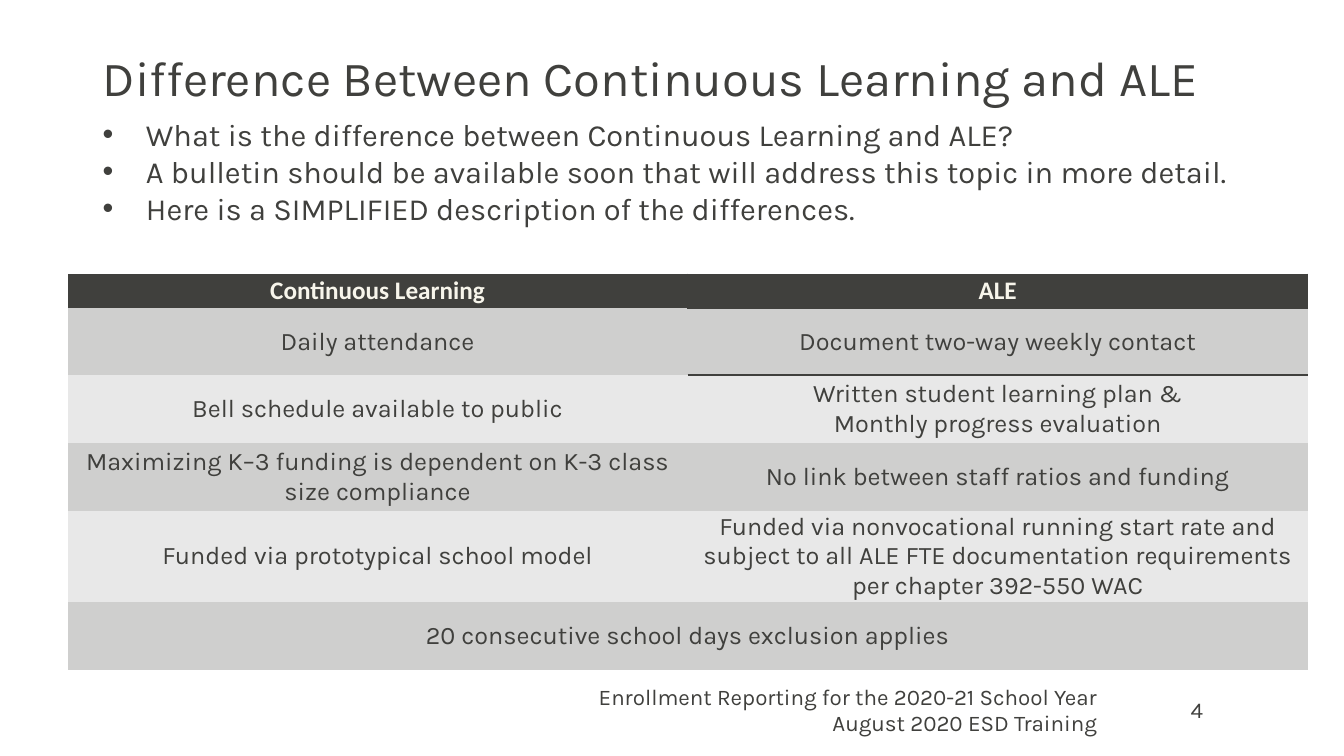
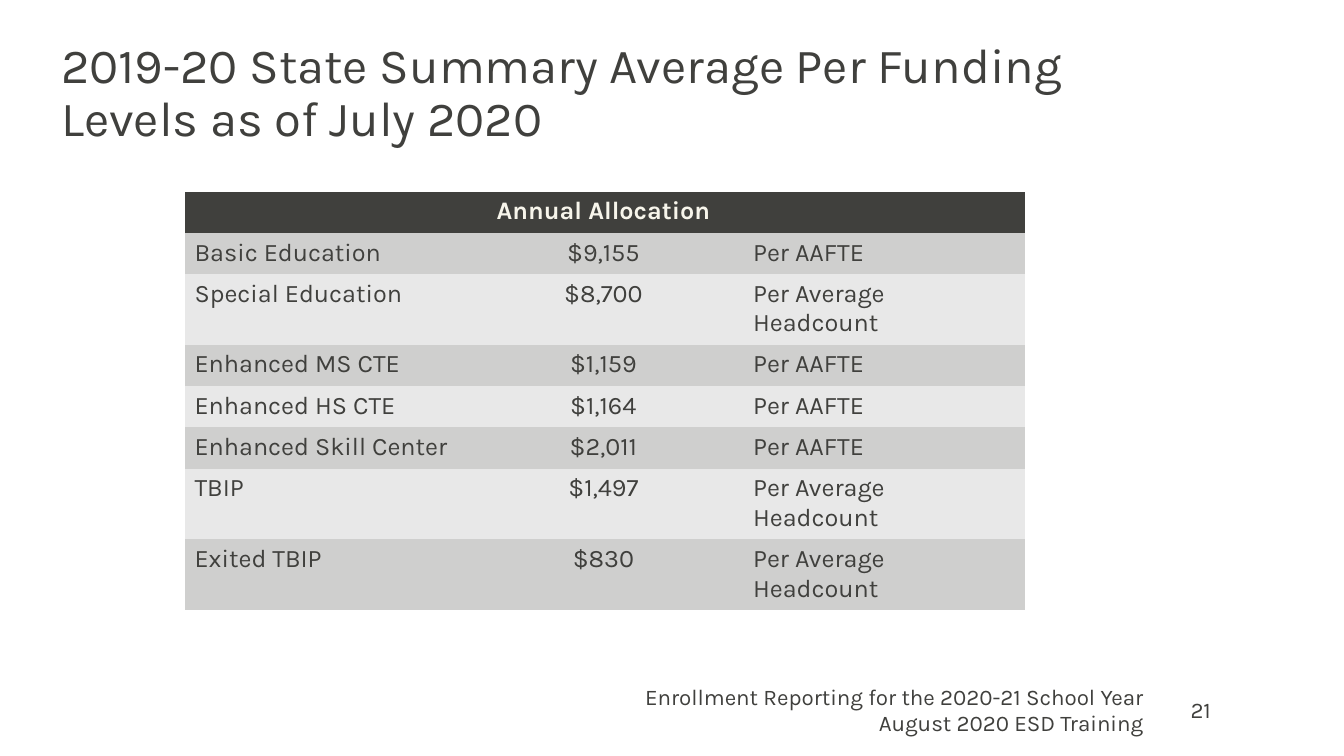
from pptx import Presentation
from pptx.dml.color import RGBColor
from pptx.enum.text import MSO_ANCHOR, PP_ALIGN
from pptx.oxml.ns import qn
from pptx.util import Emu, Pt
from lxml import etree

LEFT, CENTER, RIGHT = PP_ALIGN.LEFT, PP_ALIGN.CENTER, PP_ALIGN.RIGHT
TOP, MIDDLE = MSO_ANCHOR.TOP, MSO_ANCHOR.MIDDLE
EMU_PER_PX = 9144
COLORS = {"dark": "40403D", "cream": "F7F5EB", "odd": "CFCFCE", "even": "E8E8E8"}
BODY_FONT = "Karla"
NO_STYLE = "{2D5ABB26-0587-4C30-8999-92F81FD0307C}"
FOOTER = ["Enrollment Reporting for the 2020-21 School Year", "August 2020 ESD Training"]

SLIDES = [
    {
        "title": "Difference Between Continuous Learning and ALE",
        "title_at": (92, 7, 1150, 145),
        "bullets": [
            "What is the difference between Continuous Learning and ALE?",
            "A bulletin should be available soon that will address this topic in more detail.",
            "Here is a SIMPLIFIED description of the differences.",
        ],
        "footer_at": (462, 684, 636, 40),
        "number": "4",
        "table": {
            "at": (67, 272),
            "columns": [615, 615],
            "heights": [34, 66, 68, 67, 68, 68],
            "aligns": [CENTER, CENTER],
            "anchor": MIDDLE,
            "margins": (7, 0),
            "header_font": "Calibri",
            "borders": {(0, 0): "R", (0, 1): "LRTB", (1, 1): "TB"},
            "rows": [
                ("Continuous Learning", "ALE"),
                ("Daily attendance", "Document two-way weekly contact"),
                ("Bell schedule available to public",
                 "Written student learning plan &\nMonthly progress evaluation"),
                ("Maximizing K–3 funding is dependent on K-3 class size compliance",
                 "No link between staff ratios and funding"),
                ("Funded via prototypical school model",
                 "Funded via nonvocational running start rate and subject to all ALE FTE "
                 "documentation requirements per chapter 392-550 WAC"),
                ("20 consecutive school days exclusion applies",),
            ],
        },
    },
    {
        "title": "2019-20 State Summary Average Per Funding Levels as of July 2020",
        "title_at": (51, 21, 1120, 145),
        "bullets": [],
        "footer_at": (388, 684, 756, 40),
        "number": "21",
        "table": {
            "at": (183, 190),
            "columns": [277, 277, 280],
            "heights": [41] * 8,
            "aligns": [LEFT, CENTER, LEFT],
            "anchor": TOP,
            "margins": (10, 5),
            "header_font": BODY_FONT,
            "borders": {},
            "rows": [
                ("", "Annual Allocation", ""),
                ("Basic Education", "$9,155", "Per AAFTE"),
                ("Special Education", "$8,700", "Per Average Headcount"),
                ("Enhanced MS CTE", "$1,159", "Per AAFTE"),
                ("Enhanced HS CTE", "$1,164", "Per AAFTE"),
                ("Enhanced Skill Center", "$2,011", "Per AAFTE"),
                ("TBIP", "$1,497", "Per Average Headcount"),
                ("Exited TBIP", "$830", "Per Average Headcount"),
            ],
        },
    },
]


def px(length):
    return Emu(length * EMU_PER_PX)


def color(name):
    return RGBColor.from_string(COLORS[name])


def style(para, size, align=LEFT, tone="dark", name=BODY_FONT, bold=False):
    para.alignment = align
    para.font.size = Pt(size)
    para.font.name = name
    para.font.bold = bold
    para.font.color.rgb = color(tone)


def add_bullet(para, indent):
    props = para._p.get_or_add_pPr()
    props.set("marL", str(px(indent)))
    props.set("indent", str(px(-indent)))
    etree.SubElement(props, qn("a:buFont")).set("typeface", "Arial")
    etree.SubElement(props, qn("a:buChar")).set("char", "•")


def add_text(page, at, lines, size, align=LEFT, anchor=MIDDLE, spacing=1.0, bulleted=False):
    frame = page.shapes.add_textbox(*map(px, at)).text_frame
    frame.word_wrap = True
    frame.vertical_anchor = anchor
    frame.text = "\n".join(lines)
    for para in frame.paragraphs:
        if bulleted:
            add_bullet(para, 43)
        para.line_spacing = spacing
        style(para, size, align)


def add_border(cell, side):
    line = etree.SubElement(cell._tc.get_or_add_tcPr(), qn("a:ln" + side), w=str(Pt(1)))
    fill = etree.SubElement(line, qn("a:solidFill"))
    etree.SubElement(fill, qn("a:srgbClr")).set("val", COLORS["dark"])


def add_table(page, data):
    rows, columns, heights = data["rows"], data["columns"], data["heights"]
    size = (sum(columns), sum(heights))
    frame = page.shapes.add_table(len(rows), len(columns), *map(px, data["at"] + size))
    table = frame.table
    table._tbl.tblPr.find(qn("a:tableStyleId")).text = NO_STYLE
    for column, width in zip(table.columns, columns):
        column.width = px(width)
    for index, (row, height) in enumerate(zip(rows, heights)):
        table.rows[index].height = px(height)
        if len(row) < len(columns):
            table.cell(index, 0).merge(table.cell(index, len(columns) - 1))
        for place, text in enumerate(row):
            fill_cell(table.cell(index, place), text, index, place, data)


def fill_cell(cell, text, index, place, data):
    header = index == 0
    for side in data["borders"].get((index, place), ""):
        add_border(cell, side)
    cell.fill.solid()
    cell.fill.fore_color.rgb = color("dark" if header else "odd" if index % 2 else "even")
    cell.vertical_anchor = data["anchor"]
    across, down = map(px, data["margins"])
    cell.margin_left = cell.margin_right = across
    cell.margin_top = cell.margin_bottom = down
    cell.text = text
    for para in cell.text_frame.paragraphs:
        style(para, 18, data["aligns"][place], "cream" if header else "dark",
              data["header_font"] if header else BODY_FONT, header)


def main():
    deck = Presentation()
    deck.slide_width, deck.slide_height = px(1333), px(750)
    for content in SLIDES:
        page = deck.slides.add_slide(deck.slide_layouts[6])
        add_text(page, content["title_at"], [content["title"]], 35, spacing=0.9)
        if content["bullets"]:
            add_text(page, (92, 110, 1150, 508), content["bullets"], 22,
                     anchor=TOP, bulleted=True)
        add_table(page, content["table"])
        add_text(page, content["footer_at"], FOOTER, 16, RIGHT)
        add_text(page, (1171, 684, 70, 40), [content["number"]], 16)
    deck.save("out.pptx")


if __name__ == "__main__":
    main()
